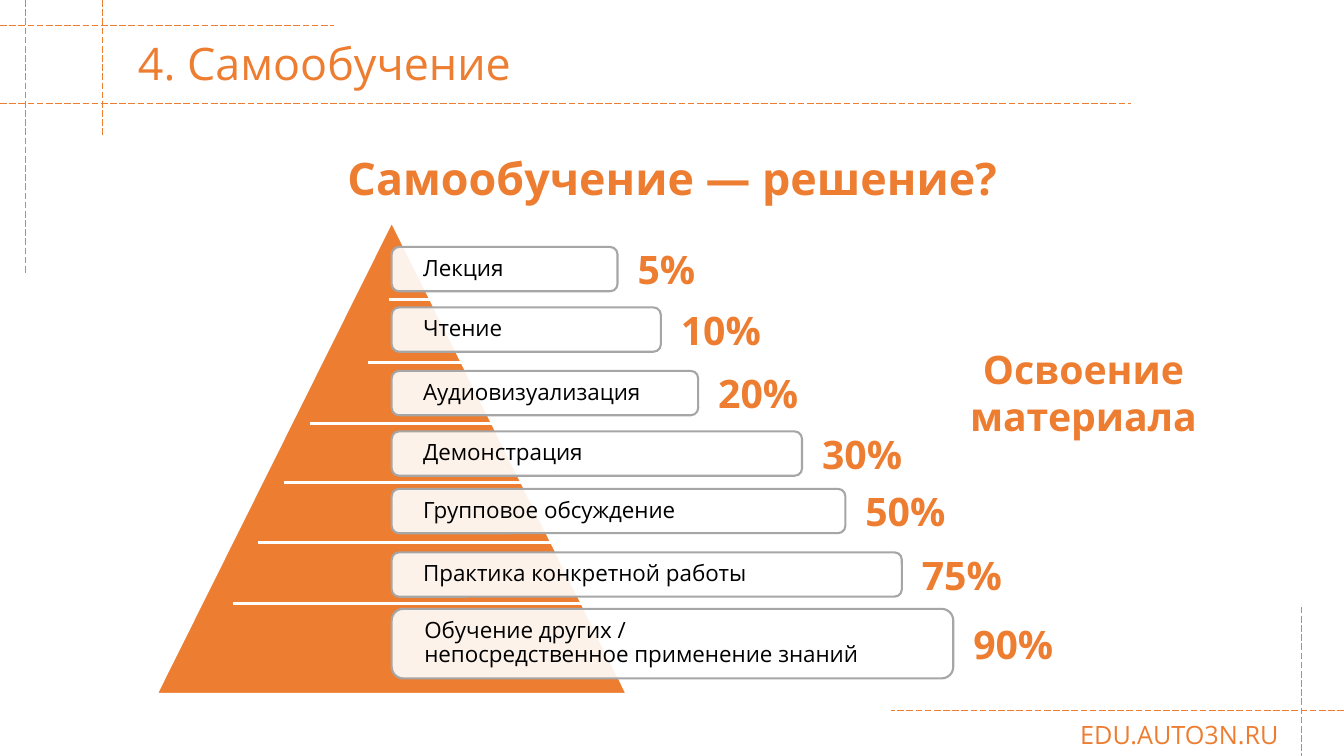
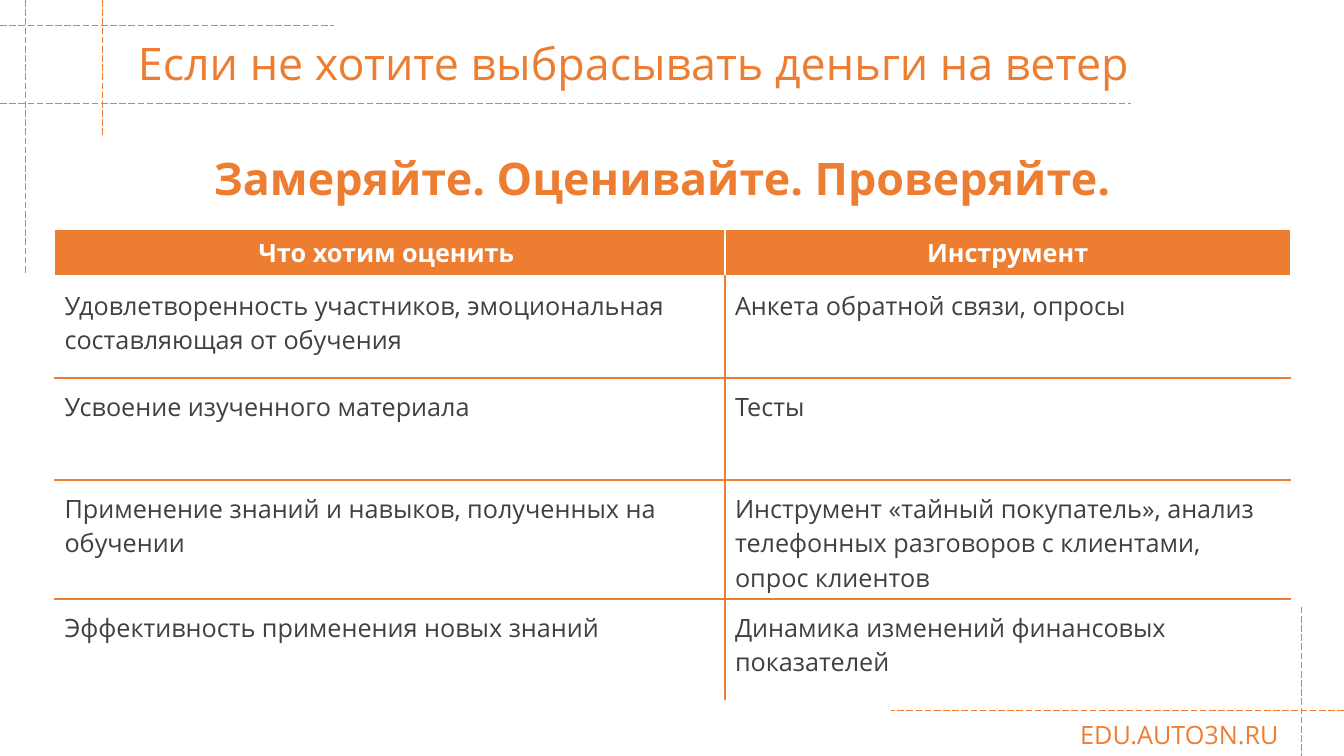
import pptx
import pptx.dml.color
import pptx.enum.dml
import pptx.enum.shapes
import pptx.enum.text
import pptx.oxml
import pptx.oxml.ns
import pptx.util

Inches = pptx.util.Inches
Pt = pptx.util.Pt
RGBColor = pptx.dml.color.RGBColor
ALIGN = pptx.enum.text.PP_ALIGN
ANCHOR = pptx.enum.text.MSO_ANCHOR
SHAPE = pptx.enum.shapes.MSO_SHAPE
NS = pptx.oxml.ns.nsdecls("a")

ORANGE = RGBColor(0xED, 0x7D, 0x31)
WHITE = RGBColor(0xFF, 0xFF, 0xFF)
GREY = RGBColor(0xA6, 0xA6, 0xA6)
DARK = RGBColor(0x40, 0x40, 0x40)
BLACK = RGBColor(0, 0, 0)

TITLE = {"size": 32, "color": ORANGE}
HEADING = {"size": 32, "color": ORANGE, "bold": True}
FOOTER = {"size": 18, "color": ORANGE}
LABEL = {"size": 16, "color": BLACK}
SHARE = {"size": 28, "color": ORANGE, "bold": True}
HEAD_CELL = {"size": 18, "color": WHITE, "bold": True}
BODY_CELL = {"size": 18, "color": DARK}

GUIDES = [
    (0, 0.25, 3.31, 0.25), (0, 1.03, 11.22, 1.03),
    (0.25, 0, 0.25, 2.71), (1.02, 0, 1.02, 1.36),
    (13.33, 7.05, 8.84, 7.05), (12.91, 6.02, 12.91, 7.5),
]
METHODS = [
    ("Лекция", "5%", 0.24, 0.44, 2.24),
    ("Чтение", "10%", 0.84, 0.44, 2.67),
    ("Аудиовизуализация", "20%", 1.47, 0.44, 3.04),
    ("Демонстрация", "30%", 2.07, 0.44, 4.07),
    ("Групповое обсуждение", "50%", 2.64, 0.44, 4.5),
    ("Практика конкретной работы", "75%", 3.27, 0.44, 5.06),
    ("Обучение других /\vнепосредственное применение знаний", "90%", 3.83, 0.69, 5.57),
]
CUTS = [
    (2.3, 0.76, 3.35), (2.09, 1.39, 3.67), (1.51, 1.99, 4.08),
    (1.26, 2.58, 4.34), (1, 3.17, 4.6), (0.75, 3.78, 5.29),
]
ROWS = [
    ("Что хотим оценить ", "Инструмент"),
    ("Удовлетворенность участников, эмоциональная составляющая от обучения",
     "Анкета обратной связи, опросы"),
    ("Усвоение изученного материала", "Тесты"),
    ("Применение знаний и навыков, полученных на обучении",
     "Инструмент «тайный покупатель», анализ телефонных разговоров с клиентами, опрос клиентов"),
    ("Эффективность применения новых знаний", "Динамика изменений финансовых показателей"),
]


def set_attrs(obj, values):
    """Set every attribute named in values on obj."""
    for name, value in values.items():
        setattr(obj, name, value)


def write(tf, text, style, **para):
    """Write one paragraph in the given style."""
    p = tf.paragraphs[0]
    p.text = text
    set_attrs(p, para)
    for font in [p.font] + [r.font for r in p.runs]:
        set_attrs(font, {"name": "Open Sans", "size": Pt(style["size"]),
                         "bold": style.get("bold", False)})
        font.color.rgb = style["color"]


def add_text(slide, box, text, style, anchor=ANCHOR.TOP, **para):
    """Add a wrapping text box."""
    tf = slide.shapes.add_textbox(*map(Inches, box)).text_frame
    set_attrs(tf, {"word_wrap": True, "vertical_anchor": anchor})
    write(tf, text, style, **para)


def add_line(slide, ends, color, width, dash=None):
    """Add a straight line without a shadow."""
    sp = slide.shapes.add_connector(
        pptx.enum.shapes.MSO_CONNECTOR.STRAIGHT, *map(Inches, ends))
    sp.line.color.rgb = color
    set_attrs(sp.line, {"width": Pt(width), "dash_style": dash})
    sp._element.spPr.append(pptx.oxml.parse_xml(f"<a:effectLst {NS}/>"))


def add_shape(slide, kind, box, fill, line, width):
    """Add a filled and outlined preset shape."""
    sp = slide.shapes.add_shape(kind, *map(Inches, box))
    sp.shadow.inherit = False
    sp.fill.solid()
    sp.fill.fore_color.rgb = fill
    sp.line.color.rgb = line
    sp.line.width = Pt(width)
    return sp


def add_base(prs, title, heading, box):
    """Add a slide with guides, title, heading and footer."""
    slide = prs.slides.add_slide(prs.slide_layouts[6])
    for ends in GUIDES:
        add_line(slide, ends, ORANGE, 0.6, pptx.enum.dml.MSO_LINE.LONG_DASH)
    add_text(slide, (9.91, 7.09, 2.87, 0.4), "EDU.AUTO3N.RU", FOOTER, alignment=ALIGN.RIGHT)
    add_text(slide, (1.27, 0.27, 11.14, 0.76), title, TITLE, ANCHOR.MIDDLE, line_spacing=0.9)
    add_text(slide, box, heading, HEADING, alignment=ALIGN.CENTER)
    return slide


def add_method(slide, box, label, share):
    """Add a labelled bar with its share to the right."""
    x, y, w, h = box
    sp = add_shape(slide, SHAPE.ROUNDED_RECTANGLE, box, WHITE, GREY, 1.5)
    color = sp._element.spPr.find(".//" + pptx.oxml.ns.qn("a:srgbClr"))
    color.append(pptx.oxml.parse_xml(f'<a:alpha {NS} val="90000"/>'))
    set_attrs(sp.text_frame, {
        "word_wrap": True, "vertical_anchor": ANCHOR.MIDDLE, "margin_left": Inches(0.29),
        "margin_right": Inches(0.07), "margin_top": 0, "margin_bottom": 0})
    write(sp.text_frame, label, LABEL, alignment=ALIGN.LEFT, line_spacing=0.9)
    add_text(slide, (x + w + 0.1, y + h / 2 - 0.22, 1.46, 0.44), share, SHARE, ANCHOR.MIDDLE)


def add_pyramid(slide, box):
    """Add the learning pyramid with its bars and dividing lines."""
    x, y, w, h = box
    add_shape(slide, SHAPE.ISOSCELES_TRIANGLE, box, ORANGE, WHITE, 1)
    for label, share, top, height, width in METHODS:
        add_method(slide, (x + w / 2, y + top, width, height), label, share)
    for left, top, right in CUTS:
        add_line(slide, (x + left, y + top, x + right, y + top), WHITE, 2.25)


def set_borders(cell, row, col):
    """Draw white outer and header borders and orange inner ones."""
    inner = WHITE if row == 0 else ORANGE
    edges = {
        "lnL": (inner, 1.5) if col else (WHITE, 1),
        "lnR": (WHITE, 1) if col else (inner, 1.5),
        "lnT": (WHITE if row == 1 else ORANGE, 1.5) if row else (WHITE, 1),
        "lnB": (WHITE, 1) if row == len(ROWS) - 1 else (inner, 1.5),
    }
    tcPr = cell._tc.get_or_add_tcPr()
    for tag, (color, width) in edges.items():
        tcPr.append(pptx.oxml.parse_xml(
            f'<a:{tag} {NS} w="{Pt(width)}"><a:solidFill><a:srgbClr val="{color}"/>'
            f'</a:solidFill></a:{tag}>'))


def add_tools_table(slide, box):
    """Add the table of what to measure and with which tool."""
    table = slide.shapes.add_table(len(ROWS), 2, *map(Inches, box)).table
    set_attrs(table, {"first_row": False, "horz_banding": False})
    for column, width in zip(table.columns, (6.65, box[2] - 6.65)):
        column.width = Inches(width)
    for row, height in zip(table.rows, (0.46, 1.01, 1.01, 1.18, 1.01)):
        row.height = Inches(height)
    for i, texts in enumerate(ROWS):
        for j, text in enumerate(texts):
            cell = table.cell(i, j)
            set_borders(cell, i, j)
            if i == 0:
                cell.fill.solid()
                cell.fill.fore_color.rgb = ORANGE
                cell.vertical_anchor = ANCHOR.MIDDLE
                write(cell.text_frame, text, HEAD_CELL, alignment=ALIGN.CENTER)
            else:
                cell.fill.background()
                cell.margin_top = Inches(0.12)
                write(cell.text_frame, text, BODY_CELL)


def add_pyramid_slide(prs):
    """Add the slide on self-study."""
    slide = add_base(prs, "4. Самообучение", "Самообучение — решение?", (1.65, 1.45, 10.04, 0.66))
    add_pyramid(slide, (1.56, 2.21, 4.65, 4.67))
    add_text(slide, (8.92, 3.38, 3.65, 1.13), "Освоение материала", SHARE, alignment=ALIGN.CENTER)


def add_table_slide(prs):
    """Add the slide on measuring results."""
    slide = add_base(prs, "Если не хотите выбрасывать деньги на ветер",
                     "Замеряйте. Оценивайте. Проверяйте. ", (0.92, 1.45, 11.42, 0.66))
    add_tools_table(slide, (0.54, 2.28, 12.26, 4.67))


def main():
    """Build and save the presentation."""
    prs = pptx.Presentation()
    set_attrs(prs, {"slide_width": Inches(13.33), "slide_height": Inches(7.5)})
    add_pyramid_slide(prs)
    add_table_slide(prs)
    prs.save("out.pptx")


if __name__ == "__main__":
    main()
